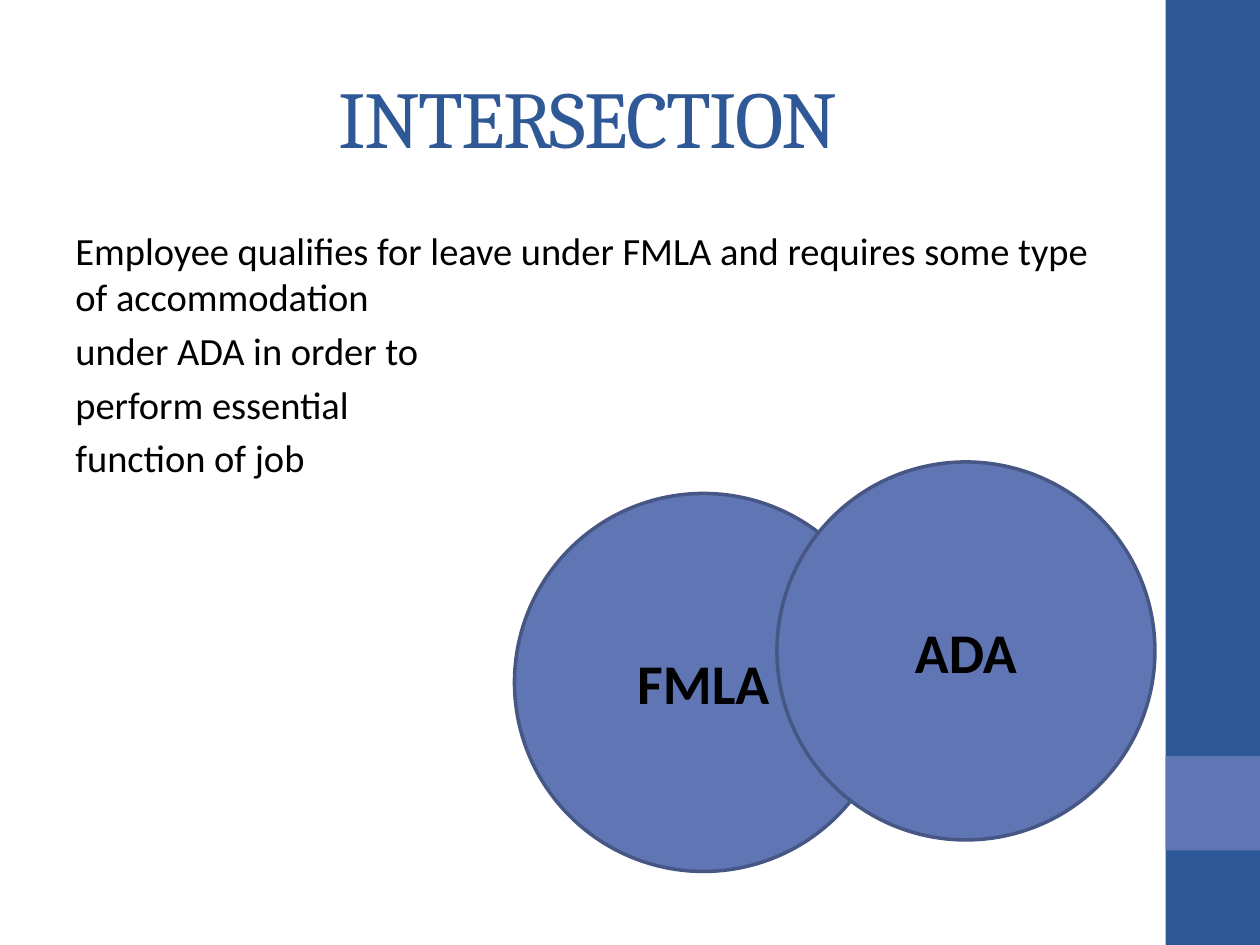
from dataclasses import dataclass

from pptx import Presentation
from pptx.dml.color import RGBColor
from pptx.enum.shapes import MSO_SHAPE
from pptx.enum.text import MSO_ANCHOR, PP_ALIGN
from pptx.util import Inches, Pt

RECT, OVAL = MSO_SHAPE.RECTANGLE, MSO_SHAPE.OVAL
TOP, MID = MSO_ANCHOR.TOP, MSO_ANCHOR.MIDDLE
LEFT, MIDST = PP_ALIGN.LEFT, PP_ALIGN.CENTER
COLS, ROWS, CELL = 120, 90, Inches(1) / 12


@dataclass(frozen=True)
class Theme:
    """Colours, fonts and type sizes of the deck."""
    navy: str = "2F5897"
    blue: str = "6076B4"
    edge: str = "475785"
    ink: str = "000000"
    head: str = "Cambria"
    body: str = "Calibri"
    big: int = 46
    mid: int = 32
    small: int = 22


class Deck:
    """Draws elements on the current slide, placed by grid columns and rows."""

    def __init__(self, theme):
        """Open a deck with one blank slide."""
        self.theme = theme
        self.file = Presentation()
        self.file.slide_width = round(COLS * CELL)
        self.file.slide_height = round(ROWS * CELL)
        self.slide = self.file.slides.add_slide(self.file.slide_layouts[6])

    def place(self, *cells):
        """Turn grid cells into lengths."""
        return [round(cell * CELL) for cell in cells]

    def label(self, frame, lines, size, face, tint, align, anchor, bold=False):
        """Fill a text frame with one paragraph per line."""
        frame.word_wrap = True
        frame.vertical_anchor = anchor
        for i, line in enumerate(lines):
            para = frame.add_paragraph() if i else frame.paragraphs[0]
            para.text = line
            para.alignment = align
            para.space_before = Pt(size * 0.2 if i else 0)
            font = para.font
            font.size, font.name, font.bold = Pt(size), face, bold
            font.color.rgb = RGBColor.from_string(tint)

    def shape(self, kind, cells, fill, edge=None):
        """Add a filled preset shape, outlined if an edge colour is given."""
        item = self.slide.shapes.add_shape(kind, *self.place(*cells))
        item.shadow.inherit = False
        item.fill.solid()
        item.fill.fore_color.rgb = RGBColor.from_string(fill)
        if edge:
            item.line.color.rgb = RGBColor.from_string(edge)
            item.line.width = Pt(2)
        else:
            item.line.fill.background()
        return item

    def title(self, cells, text):
        """Add the centred, tightly spaced title."""
        t = self.theme
        frame = self.slide.shapes.add_textbox(*self.place(*cells)).text_frame
        self.label(frame, [text], t.big, t.head, t.navy, MIDST, MID)
        run = frame.paragraphs[0].runs[0]
        run._r.get_or_add_rPr().set("spc", "-100")

    def body(self, cells, lines):
        """Add the body text."""
        t = self.theme
        frame = self.slide.shapes.add_textbox(*self.place(*cells)).text_frame
        self.label(frame, lines, t.small, t.body, t.ink, LEFT, TOP)

    def ring(self, col, row, text):
        """Add one labelled circle of the Venn diagram."""
        t = self.theme
        item = self.shape(OVAL, (col, row, 36, 36), t.blue, t.edge)
        self.label(item.text_frame, [text], t.mid, t.body, t.ink, MIDST, MID, True)


def main():
    """Build and save the slide."""
    theme = Theme()
    deck = Deck(theme)
    deck.shape(RECT, (111, 0, 9, ROWS), theme.navy)
    deck.shape(RECT, (111, 72, 9, 9), theme.blue)
    deck.title((6, 3.6, 100, 15), "INTERSECTION")
    deck.body((6, 21, 100, 63), [
        "Employee qualifies for leave under FMLA and requires some type of accommodation",
        "under ADA in order to",
        "perform essential",
        "function of job",
    ])
    deck.ring(49, 47, "FMLA")
    deck.ring(74, 44, "ADA")
    deck.file.save("out.pptx")


if __name__ == "__main__":
    main()
